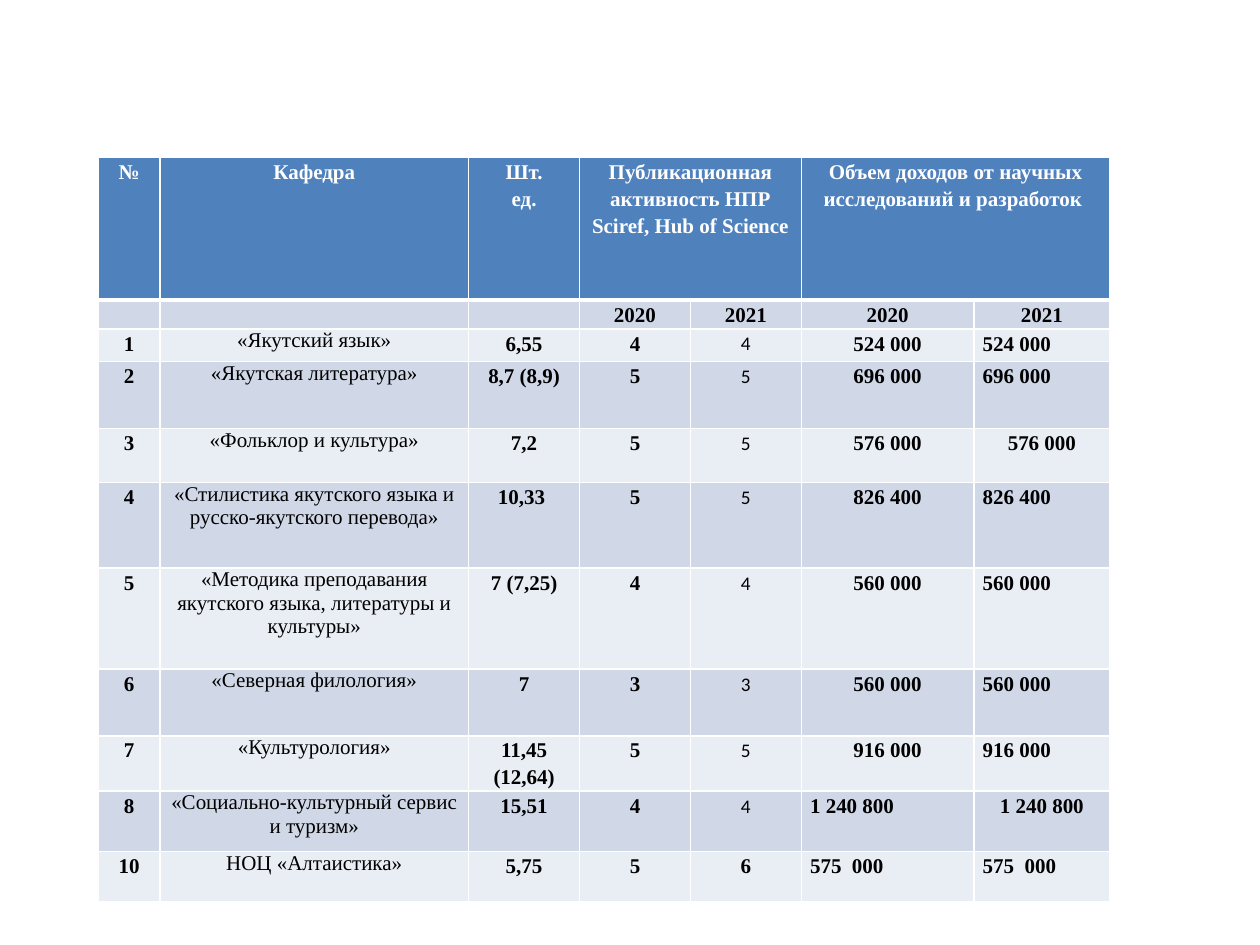
import pptx
import pptx.util
import pptx.dml.color
import pptx.enum.text
import pptx.oxml
import pptx.oxml.ns

RGBColor = pptx.dml.color.RGBColor
ALIGN = pptx.enum.text.PP_ALIGN
WHITE = RGBColor(0xFF, 0xFF, 0xFF)
BLACK = RGBColor(0, 0, 0)
HEADER_BLUE = RGBColor(0x4F, 0x81, 0xBD)
BAND_DARK = RGBColor(0xD0, 0xD8, 0xE8)
BAND_LIGHT = RGBColor(0xE9, 0xED, 0xF4)

COLUMNS = [0.49, 2.45, 0.88, 0.88, 0.88, 1.37, 1.08]
ROWS = [1.13, 0.23, 0.26, 0.53, 0.43, 0.68, 0.8, 0.53, 0.44, 0.48, 0.4]
DEPARTMENT, PUBLICATIONS_2021, INCOME_2020, INCOME_2021 = 1, 4, 5, 6

HEADINGS = ["№", "Кафедра", "Шт.\nед.",
            "Публикационная активность НПР\nSciref, Hub of Science", "",
            "Объем доходов от научных исследований и разработок ", ""]
YEARS = ["", "", "", "2020", "2021", "2020", "2021"]
DEPARTMENTS = [
    ["1", "«Якутский язык»", "6,55", "4", "4", "524 000", "524 000"],
    ["2", "«Якутская литература»", "8,7 (8,9)", "5", "5", "696 000", "696 000"],
    ["3", "«Фольклор и культура»", "7,2", "5", "5", "576 000", "576 000"],
    ["4", "«Стилистика якутского языка и русско-якутского перевода»",
     "10,33 ", "5", "5", "826 400", "826 400"],
    ["5", "«Методика преподавания якутского языка, литературы и культуры»",
     "7 (7,25)", "4", "4", "560 000", "560 000"],
    ["6", "«Северная филология»", "7", "3", "3", "560 000", "560 000"],
    ["7", "«Культурология»", "11,45 (12,64)", "5", "5", "916 000", "916 000"],
    ["8", "«Социально-культурный сервис и туризм»",
     "15,51", "4", "4", "1 240 800", "1 240 800"],
    ["10", "НОЦ «Алтаистика»", "5,75", "5", "6", "575  000", "575  000"],
]
# Income figures that break the usual alignment of their column
CENTRED_2021 = {"3", "8"}
LEFT_2020 = {"8", "10"}


def set_borders(cell, top=1, bottom=1):
    """Draw white cell borders; widths are in points."""
    tc_pr = cell._tc.get_or_add_tcPr()
    for side, width in zip("LRTB", (1, 1, top, bottom)):
        tc_pr.append(pptx.oxml.parse_xml(
            f'<a:ln{side} {pptx.oxml.ns.nsdecls("a")} w="{pptx.util.Pt(width)}">'
            f'<a:solidFill><a:srgbClr val="{WHITE}"/></a:solidFill></a:ln{side}>'))


def fill_cell(cell, text, fill, color=BLACK, align=ALIGN.CENTER, bold=True,
              size=12, font="Times New Roman", spacing=1.15):
    cell.fill.solid()
    cell.fill.fore_color.rgb = fill
    cell.margin_left = cell.margin_right = pptx.util.Inches(0.07)
    cell.margin_top = cell.margin_bottom = 0
    cell.text = text
    for p in cell.text_frame.paragraphs:
        p.alignment = align
        p.line_spacing = spacing
        p.font.name = font
        p.font.size = pptx.util.Pt(size)
        p.font.bold = bold
        p.font.color.rgb = color


def department_style(column, number):
    """Return the formatting that differs from the bold centred default."""
    if column == DEPARTMENT:
        return {"bold": False, "spacing": 1}
    if column == PUBLICATIONS_2021 and number != "10":
        return {"bold": False, "size": 11, "font": "Calibri"}
    if column == INCOME_2020 and number in LEFT_2020:
        return {"align": ALIGN.LEFT}
    if column == INCOME_2021 and number not in CENTRED_2021:
        return {"align": ALIGN.LEFT}
    return {}


def add_department_table(s, left, top):
    box = [pptx.util.Inches(v) for v in (left, top, sum(COLUMNS), sum(ROWS))]
    table = s.shapes.add_table(len(ROWS), len(COLUMNS), *box).table
    for column, width in zip(table.columns, COLUMNS):
        column.width = pptx.util.Inches(width)
    for row, height in zip(table.rows, ROWS):
        row.height = pptx.util.Inches(height)

    for i, texts in enumerate([HEADINGS, YEARS] + DEPARTMENTS):
        for j, text in enumerate(texts):
            cell = table.cell(i, j)
            set_borders(cell, top=3 if i == 1 else 1, bottom=3 if i == 0 else 1)
            if i == 0:
                fill_cell(cell, text, HEADER_BLUE, WHITE)
            else:
                style = department_style(j, texts[0]) if i > 1 else {}
                fill_cell(cell, text, BAND_DARK if i % 2 else BAND_LIGHT, **style)
    for j in (3, 5):
        table.cell(0, j).merge(table.cell(0, j + 1))


def main():
    prs = pptx.Presentation()
    prs.slide_width = pptx.util.Inches(10)
    prs.slide_height = pptx.util.Inches(7.5)
    s = prs.slides.add_slide(prs.slide_layouts[6])
    add_department_table(s, left=0.78, top=1.25)
    prs.save("out.pptx")


if __name__ == "__main__":
    main()
